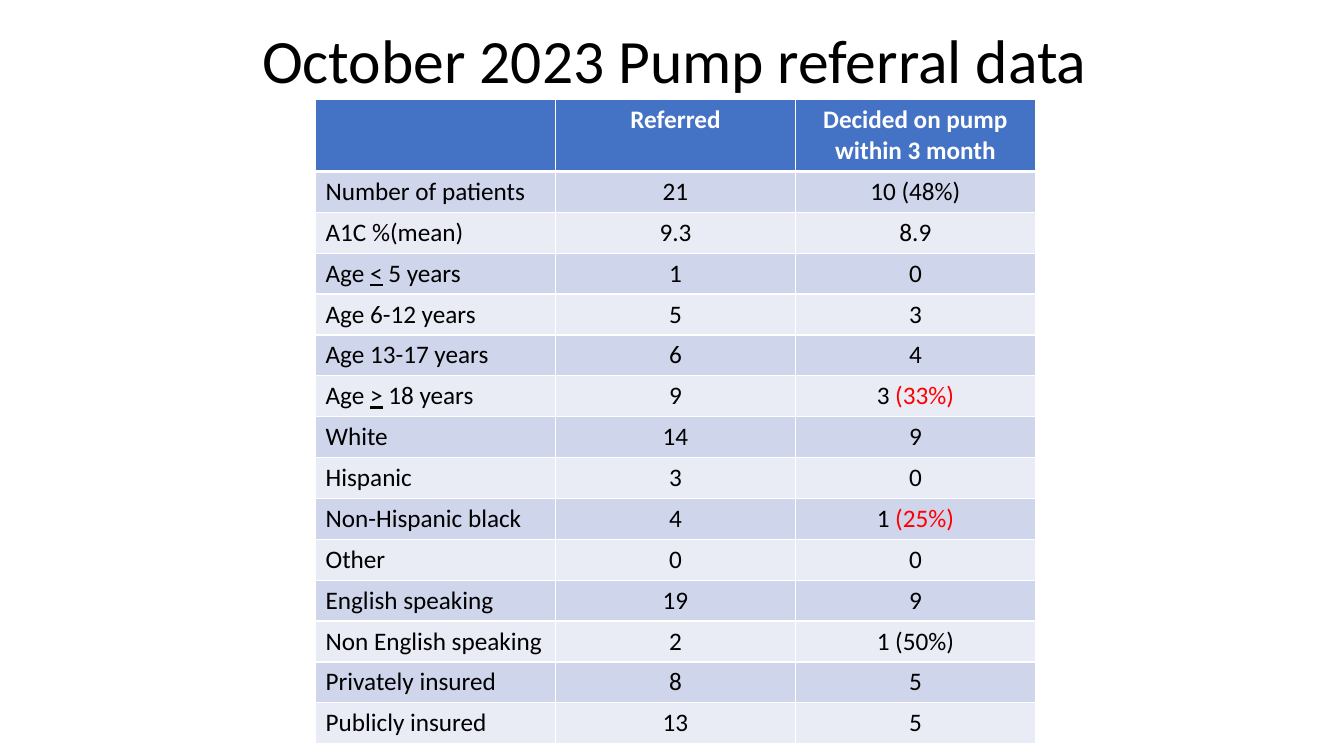
from lxml.etree import SubElement
from pptx import Presentation
from pptx.dml.color import RGBColor
from pptx.enum.text import MSO_ANCHOR, MSO_AUTO_SIZE, PP_ALIGN
from pptx.oxml.ns import qn
from pptx.util import Pt

WHITE, BLACK, RED, BLUE = "FFFFFF", "000000", "FF0000", "4472C4"
BANDS = ("CFD5EA", "E9EBF5")

HEADER = ("", "Referred", "Decided on pump within 3 month")
UNDERLINED = {"underline": True}
HIGHLIGHT = {"color": RED}
REFERRALS = [
    ("Number of patients", "21", "10 (48%)"),
    ("A1C %(mean)", "9.3", "8.9"),
    (["Age ", ("<", UNDERLINED), " 5 years"], "1", "0"),
    ("Age 6-12 years", "5", "3"),
    ("Age 13-17 years", "6", "4"),
    (["Age ", (">", UNDERLINED), " 18 years"], "9", ["3 ", ("(33%)", HIGHLIGHT)]),
    ("White", "14", "9"),
    ("Hispanic", "3", "0"),
    ("Non-Hispanic black", "4", ["1 ", ("(25%)", HIGHLIGHT)]),
    ("Other", "0", "0"),
    ("English speaking", "19", "9"),
    ("Non English speaking", "2", "1 (50%)"),
    ("Privately insured", "8", "5"),
    ("Publicly insured", "13", "5"),
]


def hex_color(value):
    return RGBColor.from_string(value)


def add_text(paragraph, text, size=18, font="Calibri", color=BLACK, bold=False, underline=False):
    run = paragraph.add_run()
    run.text = text
    run.font.name = font
    run.font.size = Pt(size)
    run.font.bold = bold
    run.font.underline = underline
    run.font.color.rgb = hex_color(color)


def add_border(cell, edge, width, color=WHITE):
    properties = cell._tc.get_or_add_tcPr()
    line = SubElement(properties, qn(f"a:ln{edge}"), w=str(Pt(width)))
    SubElement(SubElement(line, qn("a:solidFill")), qn("a:srgbClr"), val=color)


class SlideBuilder:
    def __init__(self, slide):
        self.slide = slide

    def title(self, text, left, top, width, height):
        title = self.slide.shapes.title
        title.left, title.top, title.width, title.height = map(Pt, (left, top, width, height))
        frame = title.text_frame
        frame.auto_size = MSO_AUTO_SIZE.NONE
        frame.word_wrap = True
        frame.vertical_anchor = MSO_ANCHOR.MIDDLE
        paragraph = frame.paragraphs[0]
        paragraph.alignment = PP_ALIGN.LEFT
        paragraph.line_spacing = 0.9
        add_text(paragraph, text, size=44)

    def table(self, rows, left, top, width, height, row_height):
        shape = self.slide.shapes.add_table(
            len(rows), len(rows[0]), Pt(left), Pt(top), Pt(width), Pt(height))
        for row_index, values in enumerate(rows):
            shape.table.rows[row_index].height = Pt(row_height)
            for column_index, content in enumerate(values):
                self.cell(shape.table.cell(row_index, column_index), content, row_index, column_index)
        shape.height = Pt(height)

    def cell(self, cell, content, row_index, column_index):
        is_header = row_index == 0
        widths = {"L": 1, "R": 1, "T": 3 if row_index == 1 else 1, "B": 3 if is_header else 1}
        for edge, width in widths.items():
            add_border(cell, edge, width)
        cell.fill.solid()
        cell.fill.fore_color.rgb = hex_color(BLUE if is_header else BANDS[(row_index - 1) % 2])
        if not content:
            return
        paragraph = cell.text_frame.paragraphs[0]
        paragraph.alignment = PP_ALIGN.CENTER if column_index else PP_ALIGN.LEFT
        base = {"color": WHITE if is_header else BLACK, "bold": is_header}
        for part in [content] if isinstance(content, str) else content:
            text, style = (part, {}) if isinstance(part, str) else part
            add_text(paragraph, text, **{**base, **style})


def main():
    presentation = Presentation()
    presentation.slide_width, presentation.slide_height = Pt(960), Pt(540)
    builder = SlideBuilder(presentation.slides.add_slide(presentation.slide_layouts[5]))
    builder.title("October 2023 Pump referral data", 180, -6.5, 761.8, 104.4)
    builder.table([HEADER, *REFERRALS], 225.4, 71.3, 514.2, 459.4, row_height=29.2)
    presentation.save("out.pptx")


if __name__ == "__main__":
    main()
